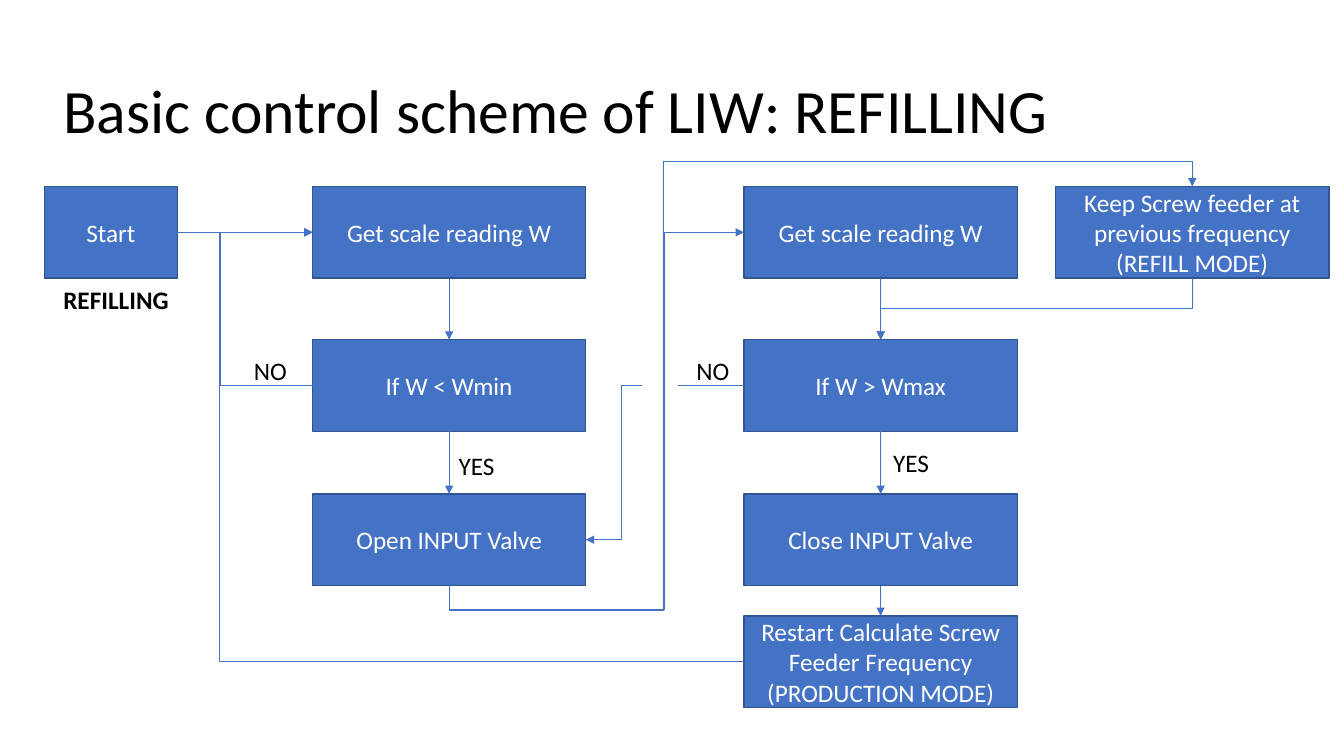
from lxml import etree
from pptx import Presentation
from pptx.dml.color import RGBColor
from pptx.enum.shapes import MSO_CONNECTOR as LINK, MSO_SHAPE as SHAPE
from pptx.enum.text import MSO_ANCHOR as ANCHOR, PP_ALIGN as ALIGN
from pptx.oxml.ns import qn
from pptx.util import Inches, Pt

# Content
TITLE = "Basic control scheme of LIW: REFILLING"
STEPS = {  # key: (column, row, paragraphs)
    "read_min": ("left", 0, ["Get scale reading W"]),
    "check_min": ("left", 1, ["If W < Wmin"]),
    "open": ("left", 2, ["Open INPUT Valve"]),
    "check_max": ("middle", 1, ["If W > Wmax"]),
    "close": ("middle", 2, ["Close INPUT Valve"]),
    "read_max": ("middle", 0, ["Get scale reading W"]),
    "keep": ("right", 0, ["Keep Screw feeder at previous frequency", "(REFILL MODE)"]),
    "restart": ("middle", 3, ["Restart Calculate Screw Feeder Frequency", "(PRODUCTION MODE)"]),
    "start": ("start", 0, ["Start"]),
}
LABELS = [  # text, left, top, width, bold
    ("NO", 6.81, 3.48, 0.57, False),
    ("NO", 2.42, 3.48, 0.57, False),
    ("YES", 4.45, 4.42, 0.6, False),
    ("YES", 8.76, 4.39, 0.6, False),
    ("REFILLING", 0.53, 2.77, 2.3, True),
]
TOP, LEFT, BOTTOM, RIGHT = range(4)
STRAIGHT_LINKS = [
    ("read_min", BOTTOM, "check_min", TOP),
    ("check_min", BOTTOM, "open", TOP),
    ("read_max", BOTTOM, "check_max", TOP),
    ("check_max", BOTTOM, "close", TOP),
    ("close", BOTTOM, "restart", TOP),
    ("start", RIGHT, "read_min", LEFT),
]
# Lanes are the x or y of each inner stretch, alternating in direction
REFILL_AGAIN = ("check_max", LEFT, "open", RIGHT, [6.16])
BENT_LINKS = [
    ("keep", BOTTOM, "check_max", TOP, [3.06]),
    ("open", BOTTOM, "keep", TOP, [6.05, 6.58, 1.6]),
    ("open", BOTTOM, "read_max", LEFT, [6.05, 6.59]),
    ("check_min", LEFT, "read_min", LEFT, [2.17]),
    ("restart", LEFT, "read_min", LEFT, [2.17]),
]

# Format
COLORS = {"box": "4472C4", "edge": "325491", "light": "FFFFFF", "dark": "000000"}
COLUMNS = {"start": (0.44, 1.32), "left": (3.1, 2.71), "middle": (7.38, 2.71), "right": (10.47, 2.71)}
ROWS = [1.85, 3.37, 4.9, 6.11]
BOX_HEIGHT = 0.91

prs = Presentation()
prs.slide_width, prs.slide_height = Inches(13.33), Inches(7.5)
slide = prs.slides.add_slide(prs.slide_layouts[5])
shapes = slide.shapes


def color(key):
    return RGBColor.from_string(COLORS[key])


def write(frame, lines, size, ink, align, anchor, bold=False, spacing=1.0):
    for key, value in {"word_wrap": True, "vertical_anchor": anchor}.items():
        setattr(frame, key, value)
    for index, line in enumerate(lines):
        paragraph = frame.paragraphs[0] if index == 0 else frame.add_paragraph()
        paragraph.text = line
        paragraph.alignment, paragraph.line_spacing = align, spacing
        font = paragraph.runs[0].font
        for key, value in {"name": "Calibri", "size": Pt(size), "bold": bold}.items():
            setattr(font, key, value)
        font.color.rgb = color(ink)


def add_box(left, top, width, height, fill, edge):
    box = shapes.add_shape(SHAPE.RECTANGLE, *map(Inches, (left, top, width, height)))
    box.shadow.inherit = False
    box.fill.solid()
    box.fill.fore_color.rgb = color(fill)
    box.line.color.rgb = color(edge)
    box.line.width = Pt(1)
    return box


def side_point(step, side):
    column, row, _ = STEPS[step]
    left, width = COLUMNS[column]
    across, down = [(0.5, 0), (0, 0.5), (0.5, 1), (1, 0.5)][side]
    return [left + across * width, ROWS[row] + down * BOX_HEIGHT]


def add_link(kind, begin, end):
    link = shapes.add_connector(kind, *map(Inches, (*begin, *end)))
    link.line.color.rgb = color("box")
    link.line.width = Pt(0.5)
    etree.SubElement(link.line._get_or_add_ln(), qn("a:tailEnd"), type="triangle")
    etree.SubElement(link._element.spPr, qn("a:effectLst"))
    return link


def add_bent(origin, origin_side, target, target_side, lanes):
    begin, end = side_point(origin, origin_side), side_point(target, target_side)
    if begin[0] == end[0]:
        begin[0] += 0.01  # a bend is measured against the width, so keep some
    link = add_link(LINK.ELBOW, begin, end)
    vertical = origin_side in (TOP, BOTTOM)
    if vertical:  # turn a quarter: the box swaps its sides about its centre
        middle_x, middle_y = (begin[0] + end[0]) / 2, (begin[1] + end[1]) / 2
        width, height = abs(end[1] - begin[1]), abs(end[0] - begin[0])
        link.left, link.top = Inches(middle_x - width / 2), Inches(middle_y - height / 2)
        link.width, link.height = Inches(width), Inches(height)
        xfrm = link._element.spPr.find(qn("a:xfrm"))
        xfrm.set("rot", "5400000")
        xfrm.set("flipH", str(int(end[1] < begin[1])))
        xfrm.set("flipV", str(int(end[0] > begin[0])))
    geometry = link._element.spPr.find(qn("a:prstGeom"))
    geometry.set("prst", f"bentConnector{len(lanes) + 2}")
    guides = geometry.find(qn("a:avLst"))
    for index, lane in enumerate(lanes):
        axis = (index + vertical) % 2
        share = (lane - begin[axis]) / (end[axis] - begin[axis])
        etree.SubElement(guides, qn("a:gd"), name=f"adj{index + 1}", fmla=f"val {round(share * 100000)}")


# Title
title = shapes.title
for key, value in {"left": 0.53, "top": 0.4, "width": 11.88, "height": 1.45}.items():
    setattr(title, key, Inches(value))
write(title.text_frame, [TITLE], 44, "dark", ALIGN.LEFT, ANCHOR.MIDDLE, spacing=0.9)

# Steps
boxes = {}
for step, (column, row, lines) in STEPS.items():
    left, width = COLUMNS[column]
    boxes[step] = add_box(left, ROWS[row], width, BOX_HEIGHT, "box", "edge")
    write(boxes[step].text_frame, lines, 18, "light", ALIGN.CENTER, ANCHOR.MIDDLE)

# Links, with a gap where the refill loop crosses the other lanes
add_bent(*REFILL_AGAIN)
add_box(6.37, 3.83, 0.35, 0.11, "light", "light")
for bent in BENT_LINKS:
    add_bent(*bent)
for origin, origin_side, target, target_side in STRAIGHT_LINKS:
    link = add_link(LINK.STRAIGHT, side_point(origin, origin_side), side_point(target, target_side))
    link.begin_connect(boxes[origin], origin_side)
    link.end_connect(boxes[target], target_side)

# Labels
for text, left, top, width, bold in LABELS:
    label = shapes.add_textbox(*map(Inches, (left, top, width, 0.4)))
    write(label.text_frame, [text], 18, "dark", ALIGN.LEFT, ANCHOR.TOP, bold)

prs.save("out.pptx")
